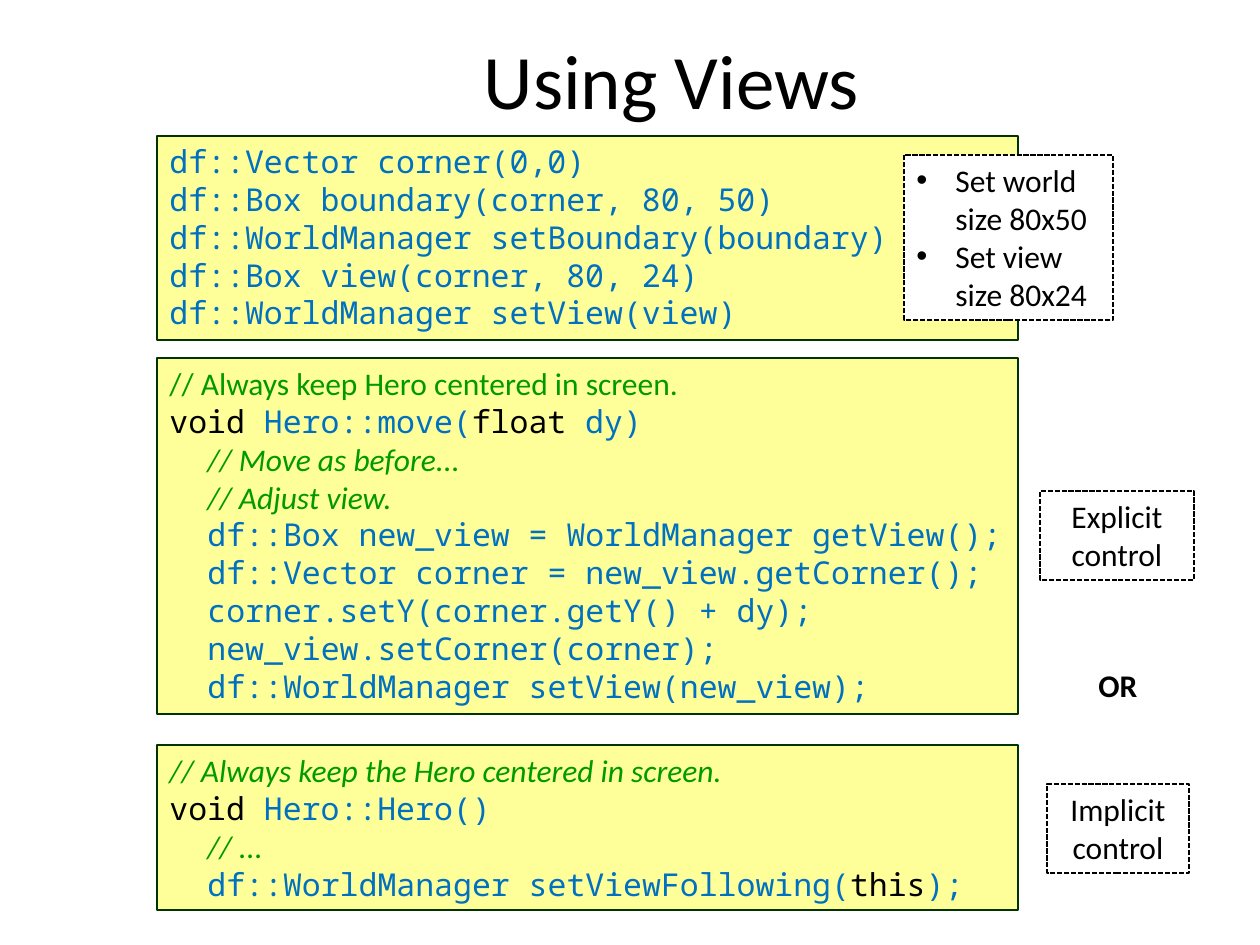
"""Build the "Using Views" slide: three code panels with explanatory notes."""
from lxml import etree
from pptx import Presentation
from pptx import util as u
from pptx.dml.color import RGBColor
from pptx.enum import dml, shapes, text
from pptx.oxml import ns

BLACK = RGBColor(0x00, 0x00, 0x00)
WHITE = RGBColor(0xFF, 0xFF, 0xFF)
BLUE = RGBColor(0x00, 0x70, 0xC0)
GREEN = RGBColor(0x00, 0x99, 0x00)
DARK_GREEN = RGBColor(0x00, 0x33, 0x00)
YELLOW = RGBColor(0xFF, 0xFF, 0x99)
SCALE = 914400 / 126

CODE = ("Noto Sans Mono", BLUE, False, False)
KEYWORD = ("Noto Sans Mono", BLACK, False, False)
HEADING = ("Calibri", GREEN, False, False)
COMMENT = ("Calibri", GREEN, False, True)
PLAIN = ("Calibri", BLACK, False, False)
STRONG = ("Calibri", BLACK, True, False)


def px(n):
    return u.Emu(round(n * SCALE))


def write(frame, lines, size=18, align=text.PP_ALIGN.LEFT, bullet=False):
    for number, (indent, runs) in enumerate(lines):
        line = frame.paragraphs[0] if number == 0 else frame.add_paragraph()
        line.alignment = align
        properties = line._p.get_or_add_pPr()
        if indent:
            properties.set("marL", str(px(indent)))
        if bullet:
            properties.set("indent", str(-px(indent)))
            etree.SubElement(properties, ns.qn("a:buFont")).set("typeface", "Arial")
            etree.SubElement(properties, ns.qn("a:buChar")).set("char", "•")
        for words, (face, color, bold, italic) in runs:
            run = line.add_run()
            run.text = words
            run.font.name = face
            run.font.size = u.Pt(size)
            run.font.color.rgb = color
            run.font.bold = bold
            run.font.italic = italic


deck = Presentation()
deck.slide_width, deck.slide_height = px(1260), px(945)
slide = deck.slides.add_slide(deck.slide_layouts[6])

title = slide.shapes.add_textbox(px(136), px(0), px(1071), px(158)).text_frame
title.word_wrap = True
title.vertical_anchor = text.MSO_ANCHOR.MIDDLE
write(title, [(0, [("Using Views", PLAIN)])], 44, text.PP_ALIGN.CENTER)

setup_code = [(0, [(line, CODE)]) for line in (
    "df::Vector corner(0,0)",
    "df::Box boundary(corner, 80, 50)",
    "df::WorldManager setBoundary(boundary)",
    "df::Box view(corner, 80, 24)",
    "df::WorldManager setView(view)",
)]
explicit_code = [
    (0, [("// Always keep Hero centered in screen.", HEADING)]),
    (0, [("void", KEYWORD), (" Hero::move(", CODE), ("float ", KEYWORD), ("dy)", CODE)]),
    (38, [("// Move as before...", COMMENT)]),
    (38, [("// Adjust view.", COMMENT)]),
] + [(38, [(line, CODE)]) for line in (
    "df::Box new_view = WorldManager getView();",
    "df::Vector corner = new_view.getCorner();",
    "corner.setY(corner.getY() + dy);",
    "new_view.setCorner(corner);",
    "df::WorldManager setView(new_view);",
)]
implicit_code = [
    (0, [("// Always keep the Hero centered in screen.", COMMENT)]),
    (0, [("void", KEYWORD), (" Hero::Hero()", CODE)]),
    (38, [("// ...", COMMENT)]),
    (38, [("df::WorldManager setViewFollowing(", CODE), ("this", KEYWORD), (");", CODE)]),
]
sizes_note = [(39, [(line, PLAIN)]) for line in ("Set world size 80x50", "Set view size 80x24")]
explicit_note = [(0, [("Explicit control", PLAIN)])]
implicit_note = [(0, [("Implicit control", PLAIN)])]

for left, top, width, height, fill, lines, align in (
    (157, 136, 861, 204, YELLOW, setup_code, text.PP_ALIGN.LEFT),
    (157, 358, 861, 356, YELLOW, explicit_code, text.PP_ALIGN.LEFT),
    (157, 745, 861, 165, YELLOW, implicit_code, text.PP_ALIGN.LEFT),
    (904, 155, 209, 165, WHITE, sizes_note, text.PP_ALIGN.LEFT),
    (1040, 491, 154, 89, None, explicit_note, text.PP_ALIGN.CENTER),
    (1047, 784, 142, 89, None, implicit_note, text.PP_ALIGN.CENTER),
):
    panel = slide.shapes.add_shape(
        shapes.MSO_SHAPE.RECTANGLE, px(left), px(top), px(width), px(height))
    panel.shadow.inherit = False
    if fill is None:
        panel.fill.background()
    else:
        panel.fill.solid()
        panel.fill.fore_color.rgb = fill
    is_code = fill == YELLOW
    panel.line.color.rgb = DARK_GREEN if is_code else BLACK
    panel.line.width = u.Pt(1.5 if is_code else 1)
    if not is_code:
        panel.line.dash_style = dml.MSO_LINE.SQUARE_DOT
    panel.text_frame.word_wrap = True
    panel.text_frame.vertical_anchor = text.MSO_ANCHOR.TOP
    write(panel.text_frame, lines, align=align, bullet=lines is sizes_note)

choice = slide.shapes.add_textbox(px(1086), px(660), px(64), px(50)).text_frame
choice.word_wrap = False
write(choice, [(0, [("OR", STRONG)])])

deck.save("out.pptx")
